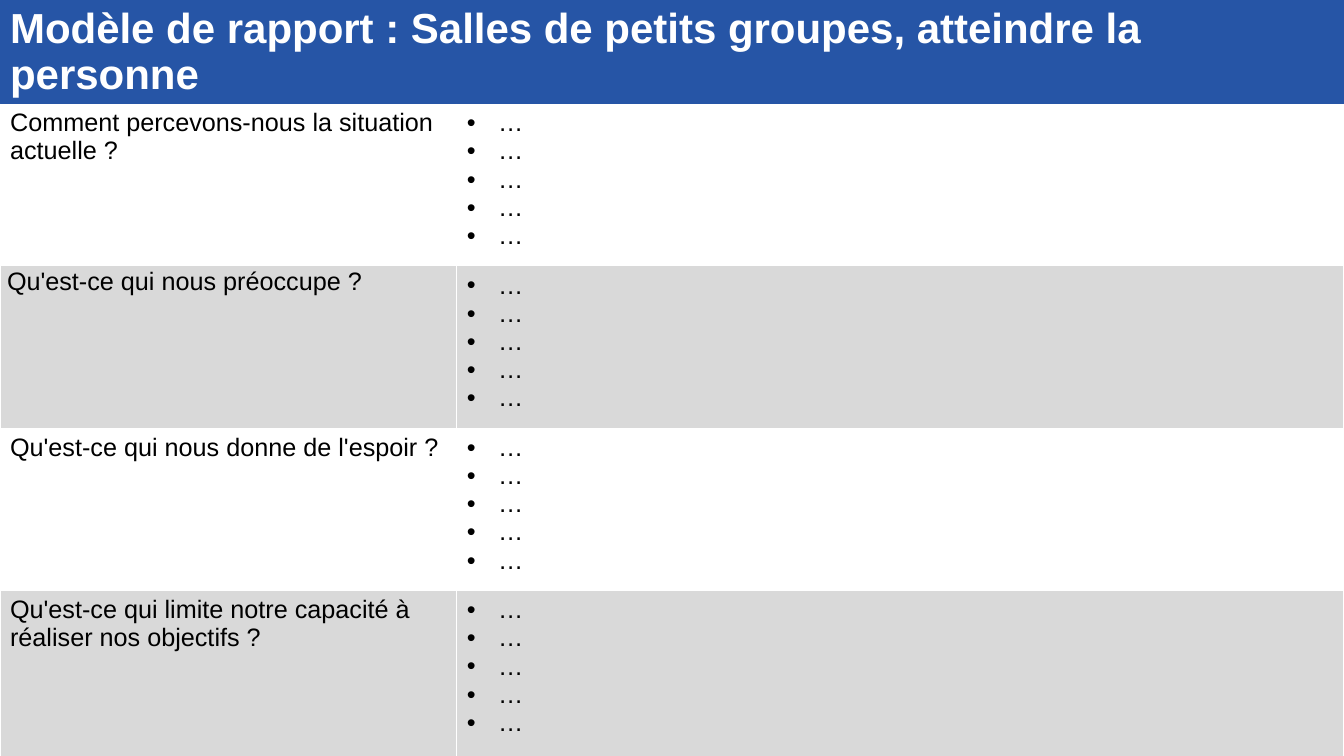
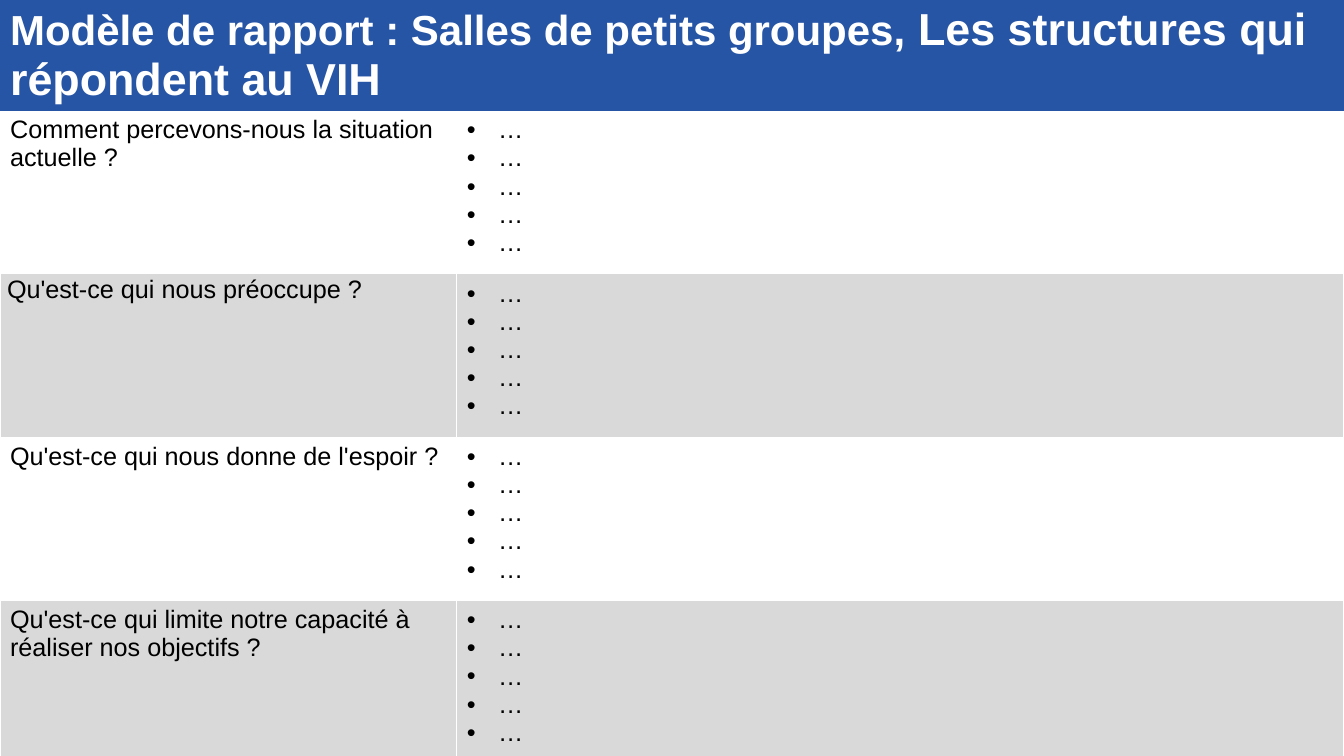
from lxml.etree import SubElement
from pptx import Presentation
from pptx.dml.color import RGBColor
from pptx.oxml import parse_xml
from pptx.oxml.ns import nsdecls, qn
from pptx.util import Inches, Pt

COLORS = {"blue": "2655A6", "grey": "D9D9D9", "white": "FFFFFF", "black": "000000"}
FONT = "Arial"
PAGE_WIDTH, PAGE_HEIGHT = 13.33, 7.5
QUESTION_WIDTH = 4.53
BULLET_INDENT = Inches(0.31)
ANSWER_COUNT = 5
PLAIN_TABLE_STYLE = "{2D5ABB26-0587-4C30-8999-92F81FD0307C}"

QUESTIONS = [
    "Comment percevons-nous la situation actuelle ?",
    "Qu'est-ce qui nous préoccupe ?",
    "Qu'est-ce qui nous donne de l'espoir ?",
    "Qu'est-ce qui limite notre capacité à réaliser nos objectifs ?",
]
INSET_QUESTION = 1  # this question has its own margins and spacing

# Title spans with sizes, header height, height of the question rows
REPORTS = [
    ([("Modèle de rapport : Salles de petits groupes, atteindre la personne", 30)],
     1.03, 1.61),
    ([("Modèle de rapport : Salles de petits groupes, ", 30),
      ("Les structures qui répondent au VIH", 32)],
     1.1, 1.62),
]


def color(name):
    return RGBColor.from_string(COLORS[name])


def fill_cell(cell, name):
    cell.fill.solid()
    cell.fill.fore_color.rgb = color(name)


def format_span(span, size, name, bold=False):
    span.font.name = FONT
    span.font.size = Pt(size)
    span.font.bold = bold
    span.font.color.rgb = color(name)


def add_side_borders(cell):
    properties = cell._tc.get_or_add_tcPr()
    for position, tag in enumerate(("lnL", "lnR")):
        properties.insert(position, parse_xml(
            f'<a:{tag} {nsdecls("a")} w="{Pt(1)}"><a:solidFill>'
            f'<a:srgbClr val="{COLORS["white"]}"/></a:solidFill></a:{tag}>'))


def add_bullet(para):
    properties = para._p.get_or_add_pPr()
    properties.set("marL", str(BULLET_INDENT))
    properties.set("indent", str(-BULLET_INDENT))
    SubElement(properties, qn("a:buFont")).set("typeface", FONT)
    SubElement(properties, qn("a:buChar")).set("char", "•")


def write_body(cell, text, fill):
    cell.text_frame.text = text
    for para in cell.text_frame.paragraphs:
        format_span(para.runs[0], 18, "black")
    fill_cell(cell, fill)
    add_side_borders(cell)


def write_title(table, spans):
    title = table.cell(0, 0)
    title.merge(table.cell(0, 1))
    para = title.text_frame.paragraphs[0]
    for text, size in spans:
        span = para.add_run()
        span.text = text
        format_span(span, size, "white", bold=True)
    fill_cell(title, "blue")


def inset_question(cell):
    cell.margin_left = cell.margin_right = Inches(0.07)
    cell.margin_top = cell.margin_bottom = 0
    para = cell.text_frame.paragraphs[0]
    para.line_spacing = 1.07
    para.space_before, para.space_after = Pt(6), Pt(8)


def add_report_table(page, spans, header_height, row_height):
    table = page.shapes.add_table(
        len(QUESTIONS) + 1, 2, 0, 0, Inches(PAGE_WIDTH), Inches(PAGE_HEIGHT)).table
    table._tbl.tblPr.find(qn("a:tableStyleId")).text = PLAIN_TABLE_STYLE

    # Grid: the last row takes what is left of the page
    table.columns[0].width = Inches(QUESTION_WIDTH)
    table.columns[1].width = Inches(PAGE_WIDTH - QUESTION_WIDTH)
    heights = [header_height] + [row_height] * (len(QUESTIONS) - 1)
    heights.append(PAGE_HEIGHT - sum(heights))
    for row, height in zip(table.rows, heights):
        row.height = Inches(height)

    # Header, then one band per question
    write_title(table, spans)
    for index, question in enumerate(QUESTIONS):
        fill = "grey" if index % 2 else "white"
        question_cell, answer_cell = table.rows[index + 1].cells
        write_body(question_cell, question, fill)
        write_body(answer_cell, "\n".join(["…"] * ANSWER_COUNT), fill)
        for para in answer_cell.text_frame.paragraphs:
            add_bullet(para)
        if index == INSET_QUESTION:
            inset_question(question_cell)


def main():
    deck = Presentation()
    deck.slide_width, deck.slide_height = Inches(PAGE_WIDTH), Inches(PAGE_HEIGHT)
    for report in REPORTS:
        page = deck.slides.add_slide(deck.slide_layouts[6])
        add_report_table(page, *report)
    deck.save("out.pptx")


if __name__ == "__main__":
    main()
